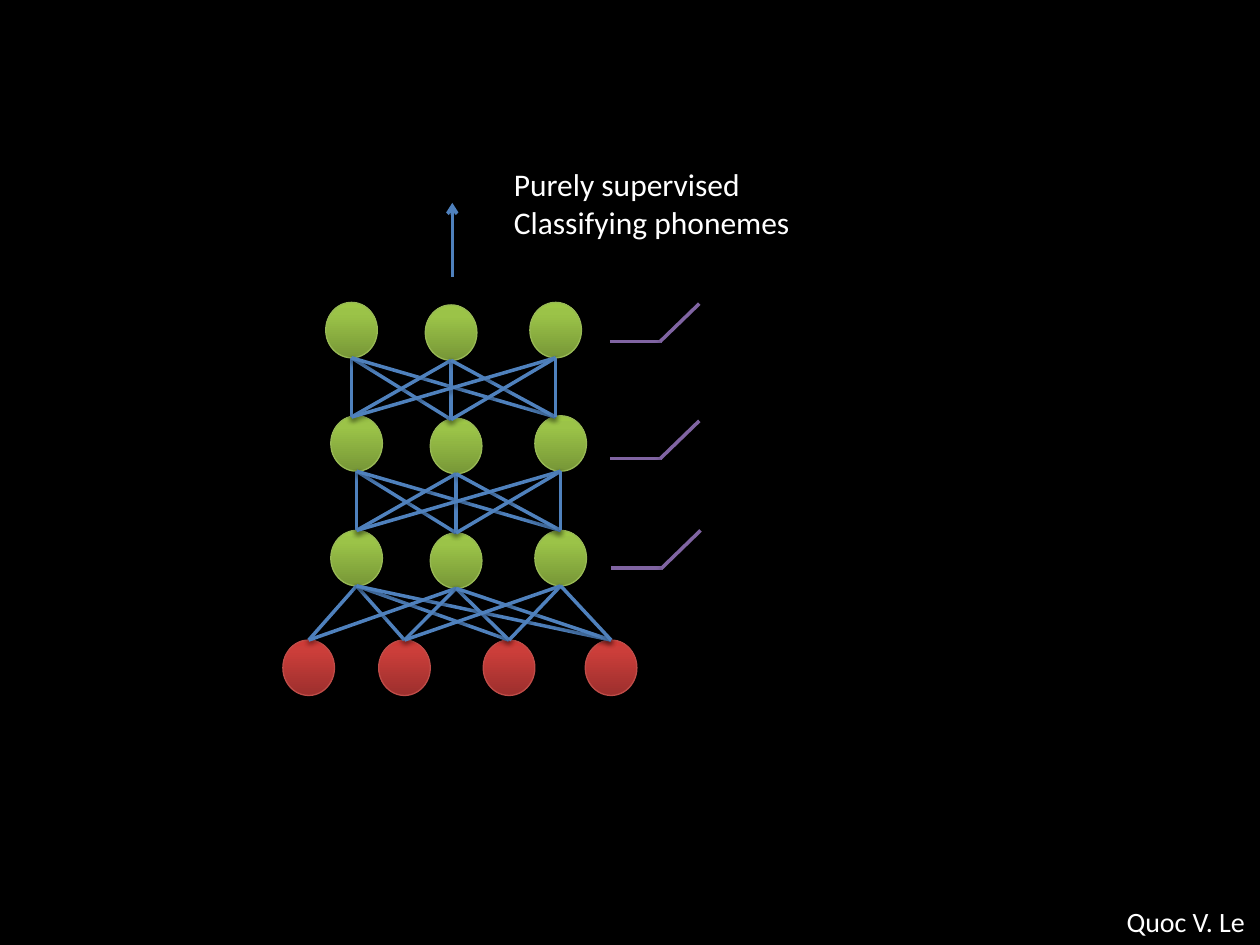
from copy import deepcopy
from itertools import product

from lxml import etree
from pptx import Presentation, util as u
from pptx.dml import color
from pptx.enum import shapes, text
from pptx.oxml import ns

COLORS = {
    "background": "000000",
    "text": "FFFFFF",
    "wire": "4F81BD",
    "ramp": "8064A2",
    "input": ("9C2F2D", "CB3E3A", "CE3B37"),
    "input_edge": "BF4C48",
    "hidden": ("779737", "9BC348", "9DC746"),
    "hidden_edge": "98B955",
}
NODE_WIDTH, NODE_HEIGHT = 0.41, 0.44
INPUT_CENTERS = (2.45, 3.21, 4.04, 4.85)
HIDDEN_CENTERS = (2.83, 3.62, 4.45)
OUTPUT_CENTERS = (2.79, 3.58, 4.41)
MIDDLE_DROP = (0, 0.02, 0)


def rgb(value):
    """Turn a hex string into a colour."""
    return color.RGBColor.from_string(value)


def add_shadow(shape, distance, opacity):
    """Give a shape a soft black shadow straight below it."""
    properties = shape._element.spPr
    effects = etree.SubElement(properties, ns.qn("a:effectLst"))
    shadow = etree.SubElement(
        effects, ns.qn("a:outerShdw"), blurRad=str(u.Pt(3.1)),
        dist=str(u.Pt(distance)), dir="5400000", rotWithShape="0")
    black = etree.SubElement(shadow, ns.qn("a:srgbClr"), val="000000")
    etree.SubElement(black, ns.qn("a:alpha"), val=str(opacity * 1000))


def add_node(slide, center, top, kind):
    """Draw one neuron with a vertical gradient."""
    node = slide.shapes.add_shape(
        shapes.MSO_SHAPE.OVAL, u.Inches(center - NODE_WIDTH / 2),
        u.Inches(top), u.Inches(NODE_WIDTH), u.Inches(NODE_HEIGHT))
    node.fill.gradient()
    node.fill.gradient_angle = 90
    stop_list = node._element.spPr.find(".//" + ns.qn("a:gsLst"))
    stop_list.append(deepcopy(stop_list[0]))
    for stop, shade, position in zip(
            node.fill.gradient_stops, COLORS[kind], (0, 0.8, 1)):
        stop.color.rgb = rgb(shade)
        stop.position = position
    node.line.color.rgb = rgb(COLORS[kind + "_edge"])
    node.line.width = u.Pt(0.75)
    add_shadow(node, 1.8, 35)


def add_layer(slide, points, kind):
    """Draw a row of neurons from their top centre points."""
    for center, top in points:
        add_node(slide, center, top, kind)


def add_line(slide, start, end, tone="wire", arrow=False):
    """Draw a straight line, with an arrowhead at its end on request."""
    line = slide.shapes.add_connector(
        shapes.MSO_CONNECTOR.STRAIGHT,
        *(u.Inches(value) for value in (*start, *end)))
    line.line.color.rgb = rgb(COLORS[tone])
    line.line.width = u.Pt(2)
    if arrow:
        etree.SubElement(line.line._get_or_add_ln(), ns.qn("a:tailEnd"), type="arrow")
    add_shadow(line, 1.6, 38)


def connect_layers(slide, lower, upper, skipped=()):
    """Wire the tops of the lower layer to the bottoms of the upper one."""
    for (center, top), start in product(upper, lower):
        if (start[0], center) not in skipped:
            add_line(slide, start, (center, top + NODE_HEIGHT))


def add_ramp(slide, left, base):
    """Draw a rectifier curve: a flat part and a rising part."""
    add_line(slide, (left, base), (left + 0.41, base), "ramp")
    add_line(slide, (left + 0.4, base), (left + 0.71, base - 0.3), "ramp")


def add_text(slide, lines, left, top, width, height, size, align=text.PP_ALIGN.LEFT):
    """Add a text box with one paragraph for each line."""
    box = slide.shapes.add_textbox(
        *(u.Inches(value) for value in (left, top, width, height)))
    frame = box.text_frame
    frame.word_wrap = False
    frame.auto_size = text.MSO_AUTO_SIZE.SHAPE_TO_FIT_TEXT
    frame.text = "\n".join(lines)
    for para in frame.paragraphs:
        para.alignment = align
        for span in para.runs:
            span.font.name = "Calibri"
            span.font.size = u.Pt(size)
            span.font.color.rgb = rgb(COLORS["text"])


def layer_points(centers, top):
    """Give the top centre points of a three-neuron layer."""
    return [(center, top + drop) for center, drop in zip(centers, MIDDLE_DROP)]


def main():
    """Build the network slide."""
    deck = Presentation()
    deck.slide_width, deck.slide_height = u.Inches(10), u.Inches(7.5)
    slide = deck.slides.add_slide(deck.slide_layouts[6])
    slide.background.fill.solid()
    slide.background.fill.fore_color.rgb = rgb(COLORS["background"])

    inputs = [(center, 5.08) for center in INPUT_CENTERS]
    first = layer_points(HIDDEN_CENTERS, 4.21)
    second = layer_points(HIDDEN_CENTERS, 3.3)
    outputs = layer_points(OUTPUT_CENTERS, 2.4)

    add_layer(slide, inputs, "input")
    add_layer(slide, first, "hidden")
    add_layer(slide, second, "hidden")
    connect_layers(slide, inputs, first,
                   skipped=[(INPUT_CENTERS[0], HIDDEN_CENTERS[-1])])
    connect_layers(slide, first, second)
    add_layer(slide, outputs, "hidden")
    connect_layers(slide, layer_points(OUTPUT_CENTERS, 3.31), outputs)

    add_line(slide, (3.59, 2.2), (3.59, 1.61), arrow=True)
    add_text(slide, ["Purely supervised", "Classifying phonemes"],
             3.98, 1.26, 2.41, 0.71, size=18)
    for left, base in ((4.85, 4.51), (4.84, 3.64), (4.84, 2.71)):
        add_ramp(slide, left, base)
    add_text(slide, ["Quoc V. Le"], 8.82, 7.13, 1.18, 0.37, size=16,
             align=text.PP_ALIGN.CENTER)
    deck.save("out.pptx")


if __name__ == "__main__":
    main()
